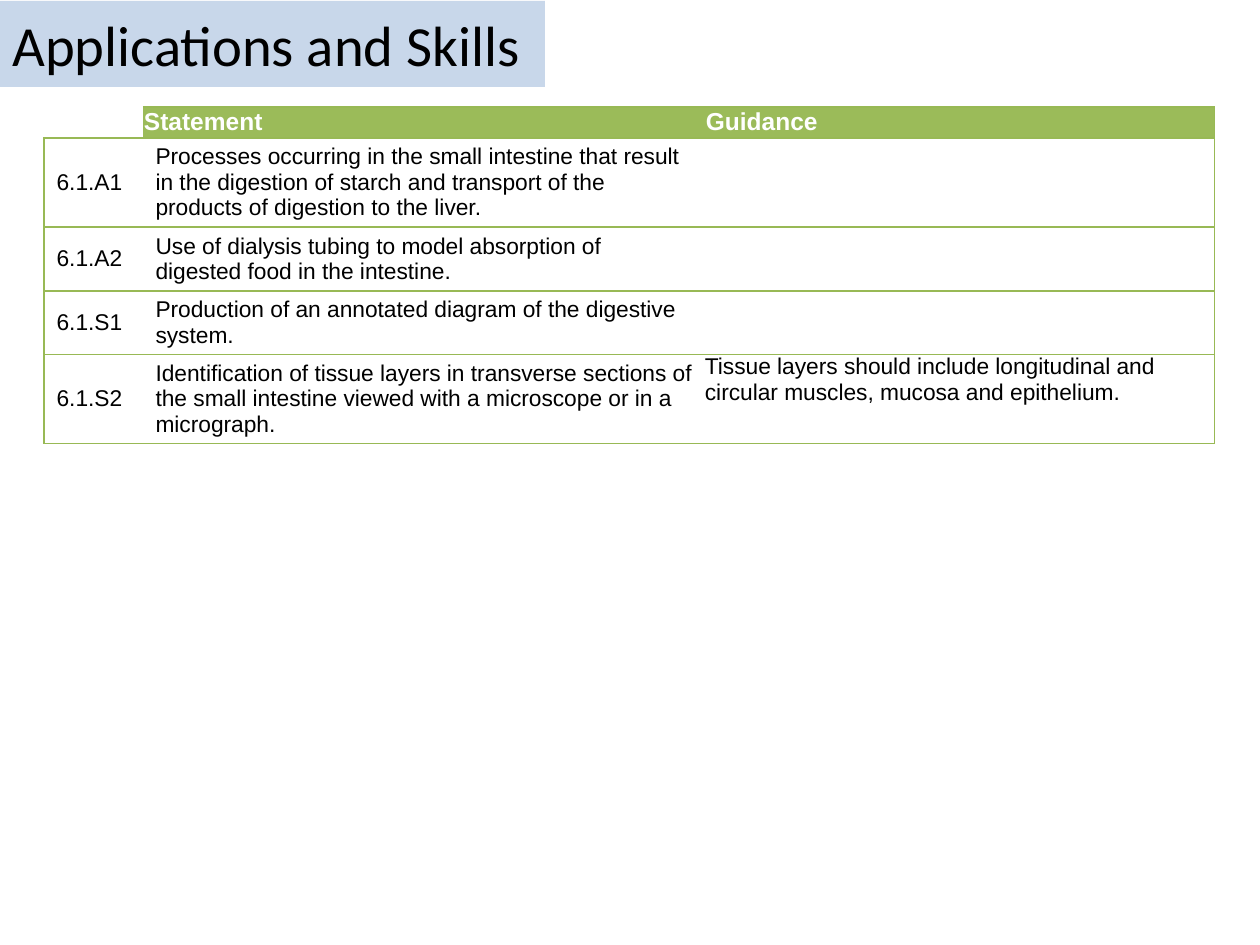
from lxml import etree
from pptx import Presentation
from pptx import util as u
from pptx.dml.color import RGBColor
from pptx.enum import shapes, text
from pptx.oxml import ns

SCALE = 914400 // 126
BLACK = RGBColor(0, 0, 0)
WHITE = RGBColor(255, 255, 255)
BLUE = RGBColor(0xB9, 0xCD, 0xE5)
GREEN = RGBColor(0x9B, 0xBB, 0x59)
EDGE = RGBColor(0x98, 0xB9, 0x55)

COLS = [99, 562, 510]
ROWS = [31, 89, 64, 63, 89]
CELLS = [
    ["", "Statement", "Guidance"],
    ["6.1.A1", "Processes occurring in the small intestine that result in the "
     "digestion of starch and transport of the products of digestion to the liver.", ""],
    ["6.1.A2", "Use of dialysis tubing to model absorption of digested food "
     "in the intestine.", ""],
    ["6.1.S1", "Production of an annotated diagram of the digestive system.", ""],
    ["6.1.S2", "Identification of tissue layers in transverse sections of the small "
     "intestine viewed with a microscope or in a micrograph.",
     "Tissue layers should include longitudinal and circular muscles, "
     "mucosa and epithelium."],
]


def px(n):
    return u.Emu(n * SCALE)


def sub(node, tag, **attrs):
    return etree.SubElement(node, ns.qn(tag), **attrs)


def add_run(para, words, size, color, font, bold=False):
    run = para.add_run()
    run.text = words
    run.font.size = u.Pt(size)
    run.font.name = font
    run.font.bold = bold
    run.font.color.rgb = color


def add_title(slide, words):
    box = slide.shapes.add_shape(shapes.MSO_SHAPE.RECTANGLE,
                                 px(0), px(1), px(545), px(86))
    box.shadow.inherit = False
    box.line.fill.background()
    box.fill.solid()
    box.fill.fore_color.rgb = BLUE
    tint = box.fill._xPr.find(".//" + ns.qn("a:srgbClr"))
    sub(tint, "a:alpha", val="78000")
    frame = box.text_frame
    frame.word_wrap = True
    frame.vertical_anchor = text.MSO_ANCHOR.MIDDLE
    para = frame.paragraphs[0]
    para.alignment = text.PP_ALIGN.LEFT
    add_run(para, words, 32.4, BLACK, "Calibri")


def set_edges(cell, sides):
    """Draw the sides named by letter (L, R, T, B) and clear the others."""
    props = cell._tc.get_or_add_tcPr()
    for side in "LRTB":
        line = sub(props, "a:ln" + side, w=str(u.Pt(0.75)))
        if side in sides:
            sub(sub(line, "a:solidFill"), "a:srgbClr", val=str(EDGE))
        else:
            sub(line, "a:noFill")


def set_pad(cell, left, right, top, bottom):
    cell.margin_left, cell.margin_right = px(left), px(right)
    cell.margin_top, cell.margin_bottom = px(top), px(bottom)


def fill_cell(cell, words, row, col):
    head = row == 0
    corner = head and col == 0
    ends = {0: "L", len(COLS) - 1: "R"}.get(col, "")
    set_edges(cell, "B" if corner else "TB" + ends)
    if corner:
        cell.fill.background()
    else:
        cell.fill.solid()
        cell.fill.fore_color.rgb = GREEN if head else WHITE
    if head:
        set_pad(cell, 1, 1, 1, 0)
    elif col == 2:
        set_pad(cell, 0, 0, 0, 0)
    else:
        cell.vertical_anchor = text.MSO_ANCHOR.MIDDLE
    size = 14 if head else 13
    para = cell.text_frame.paragraphs[0]
    if words:
        add_run(para, words, size, WHITE if head else BLACK, "Arial", head)
    else:
        sub(para._p, "a:endParaRPr", sz=str(size * 100))


def add_grid(slide):
    frame = slide.shapes.add_table(len(ROWS), len(COLS), px(44), px(107),
                                   px(sum(COLS)), px(sum(ROWS)))
    grid = frame.table
    grid.first_row = grid.horz_banding = False
    for col, width in zip(grid.columns, COLS):
        col.width = px(width)
    for row, height in zip(grid.rows, ROWS):
        row.height = px(height)
    for r, line in enumerate(CELLS):
        for c, words in enumerate(line):
            fill_cell(grid.cell(r, c), words, r, c)


def main():
    deck = Presentation()
    deck.slide_width, deck.slide_height = px(1260), px(945)
    slide = deck.slides.add_slide(deck.slide_layouts[6])
    add_title(slide, "Applications and Skills")
    add_grid(slide)
    deck.save("out.pptx")


if __name__ == "__main__":
    main()
